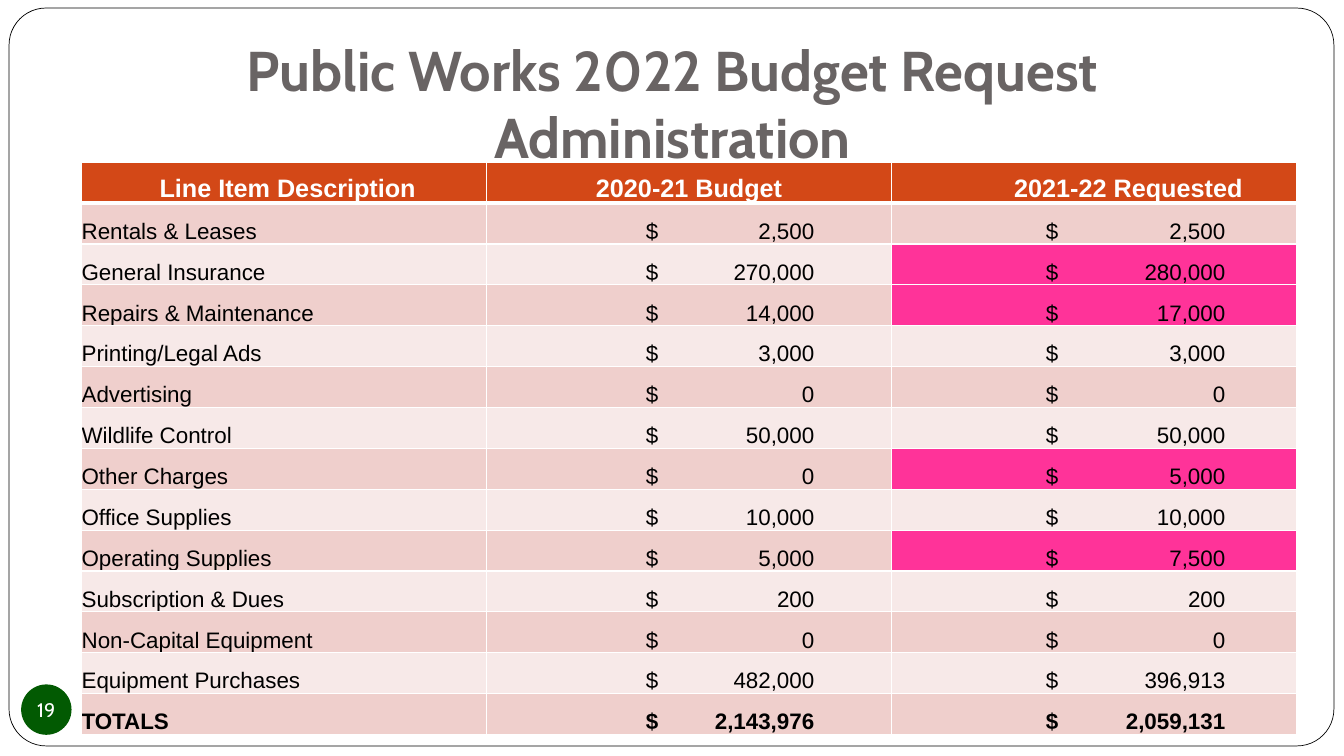
from lxml.etree import SubElement
from pptx import Presentation
from pptx.dml.color import RGBColor
from pptx.enum.shapes import MSO_SHAPE
from pptx.enum.text import MSO_ANCHOR, PP_ALIGN
from pptx.oxml.ns import qn
from pptx.util import Inches, Pt

TITLE = "Public Works 2022 Budget Request\vAdministration"
HEADINGS = ["Line Item Description", "2020-21 Budget", "2021-22 Requested"]
BUDGET = [
    ("Rentals & Leases", "2,500", "2,500"),
    ("General Insurance", "270,000", "280,000"),
    ("Repairs & Maintenance", "14,000", "17,000"),
    ("Printing/Legal Ads", "3,000", "3,000"),
    ("Advertising", "0", "0"),
    ("Wildlife Control", "50,000", "50,000"),
    ("Other Charges", "0", "5,000"),
    ("Office Supplies", "10,000", "10,000"),
    ("Operating Supplies", "5,000", "7,500"),
    ("Subscription & Dues", "200", "200"),
    ("Non-Capital Equipment", "0", "0"),
    ("Equipment Purchases", "482,000", "396,913"),
    ("TOTALS", "2,143,976", "2,059,131"),
]
INCREASED = {"General Insurance", "Repairs & Maintenance", "Other Charges", "Operating Supplies"}
PAGE_NUMBER = "19"

HEADING_INDENTS = [0.07, 0, 0.68]
AMOUNT_TABS = {1: (1.58, 3.25), 2: (1.53, 3.31)}
TABLE_LEFT, TABLE_TOP, TABLE_WIDTH, TABLE_HEIGHT = 0.81, 1.61, 12.05, 5.68
HEADER_FILL, PINK = "D34817", "FF3399"
BANDS = ["EFCFCC", "F7E9E8"]

TITLE_FONT = {"name": "Cabin", "size": Pt(40), "bold": True}
HEADING_FONT = {"name": "Arial", "size": Pt(18), "bold": True}
ITEM_FONT = {"name": "Arial", "size": Pt(16), "bold": False}
TOTAL_FONT = {**ITEM_FONT, "bold": True}
NUMBER_FONT = {"name": "Cabin", "size": Pt(14), "bold": False}


def color(code):
    return RGBColor.from_string(code)


def fill_solid(target, code):
    target.fill.solid()
    target.fill.fore_color.rgb = color(code)


def set_margins(target, left, top, right, bottom):
    margins = {"left": left, "top": top, "right": right, "bottom": bottom}
    for side, value in margins.items():
        setattr(target, f"margin_{side}", Inches(value))


def write(frame, text, font, code, align):
    frame.text = text
    para = frame.paragraphs[0]
    para.alignment = align
    for span in para.runs:
        for name, value in font.items():
            setattr(span.font, name, value)
        span.font.color.rgb = color(code)
    return para


def add_borders(cell, top, bottom):
    properties = cell._tc.get_or_add_tcPr()
    for side, width in {"L": 1, "R": 1, "T": top, "B": bottom}.items():
        line = SubElement(properties, qn(f"a:ln{side}"), w=str(Pt(width)))
        solid = SubElement(line, qn("a:solidFill"))
        SubElement(solid, qn("a:srgbClr"), val="FFFFFF")


def add_tabs(para, dollar, amount):
    tabs = SubElement(para._p.get_or_add_pPr(), qn("a:tabLst"))
    for position, align in ((dollar, "l"), (amount, "r")):
        SubElement(tabs, qn("a:tab"), pos=str(Inches(position)), algn=align)


def add_frame(page):
    box = page.shapes.add_shape(
        MSO_SHAPE.ROUNDED_RECTANGLE, Inches(0.09), Inches(0.08), Inches(13.14), Inches(7.32))
    box.adjustments[0] = 0.05
    box.shadow.inherit = False
    fill_solid(box, "FFFFFF")
    box.line.color.rgb = color("000000")
    box.line.width = Pt(0.5)


def add_title(page):
    box = page.shapes.add_textbox(Inches(2.17), Inches(0.3), Inches(9), Inches(1.25))
    frame = box.text_frame
    frame.word_wrap = True
    frame.vertical_anchor = MSO_ANCHOR.TOP
    set_margins(frame, 0.1, 0.05, 0.1, 0.1)
    write(frame, TITLE, TITLE_FONT, "696464", PP_ALIGN.CENTER)


def add_heading(cell, column):
    set_margins(cell, 0.01, 0.01, 0.01, 0)
    add_borders(cell, 1, 3)
    fill_solid(cell, HEADER_FILL)
    para = write(cell.text_frame, HEADINGS[column], HEADING_FONT, "FFFFFF", PP_ALIGN.CENTER)
    para._p.get_or_add_pPr().set("marL", str(Inches(HEADING_INDENTS[column])))


def add_entry(cell, row, column):
    item = BUDGET[row][0]
    set_margins(cell, 0, 0, 0, 0)
    add_borders(cell, 3 if row == 0 else 1, 1)
    fill_solid(cell, PINK if column == 2 and item in INCREASED else BANDS[row % 2])
    value = BUDGET[row][column]
    text = f"\t$\t{value}" if column else value
    font = TOTAL_FONT if item == "TOTALS" else ITEM_FONT
    para = write(cell.text_frame, text, font, "000000", PP_ALIGN.LEFT)
    if column:
        add_tabs(para, *AMOUNT_TABS[column])


def add_budget(page):
    row_count, column_count = len(BUDGET) + 1, len(HEADINGS)
    table = page.shapes.add_table(
        row_count, column_count, Inches(TABLE_LEFT), Inches(TABLE_TOP),
        Inches(TABLE_WIDTH), Inches(TABLE_HEIGHT)).table
    for column in table.columns:
        column.width = Inches(TABLE_WIDTH / column_count)
    for row in table.rows:
        row.height = Inches(TABLE_HEIGHT / row_count)
    for row in range(row_count):
        for column in range(column_count):
            cell = table.cell(row, column)
            cell.vertical_anchor = MSO_ANCHOR.BOTTOM
            if row == 0:
                add_heading(cell, column)
            else:
                add_entry(cell, row - 1, column)


def add_page_number(page):
    badge = page.shapes.add_shape(
        MSO_SHAPE.OVAL, Inches(0.21), Inches(6.79), Inches(0.5), Inches(0.5))
    badge.shadow.inherit = False
    fill_solid(badge, "025A02")
    badge.line.fill.background()
    frame = badge.text_frame
    frame.word_wrap = False
    frame.vertical_anchor = MSO_ANCHOR.MIDDLE
    set_margins(frame, 0, 0, 0, 0)
    write(frame, PAGE_NUMBER, NUMBER_FONT, "FFFFFF", PP_ALIGN.CENTER)


def main():
    deck = Presentation()
    deck.slide_width, deck.slide_height = Inches(13.33), Inches(7.5)
    page = deck.slides.add_slide(deck.slide_layouts[6])
    add_frame(page)
    add_title(page)
    add_budget(page)
    add_page_number(page)
    deck.save("out.pptx")


if __name__ == "__main__":
    main()
